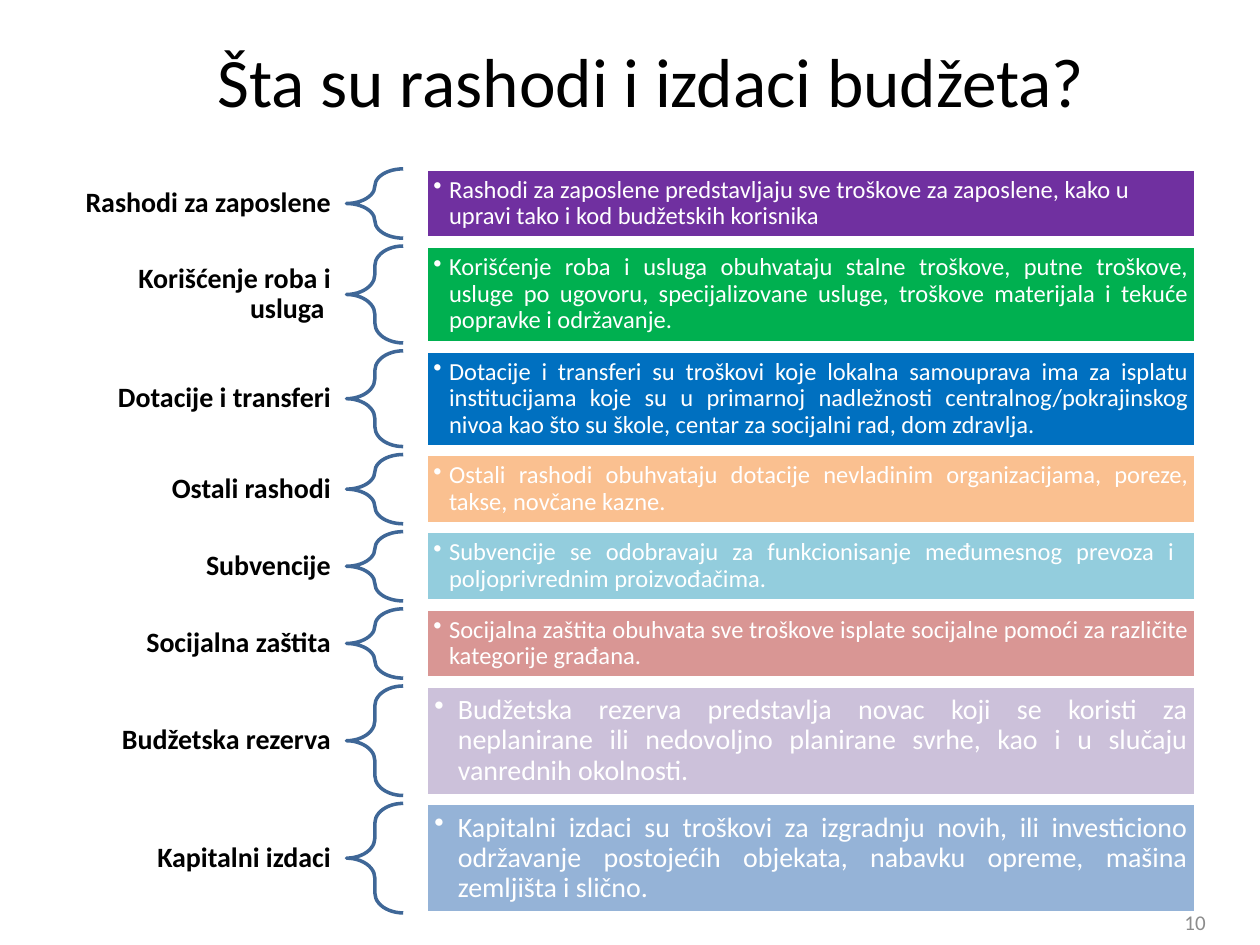
from dataclasses import dataclass

from lxml import etree
from pptx import Presentation
from pptx.dml.color import RGBColor
from pptx.enum.shapes import MSO_SHAPE
from pptx.enum.text import MSO_ANCHOR, PP_ALIGN
from pptx.oxml.ns import qn
from pptx.util import Pt

LEFT, CENTER, RIGHT, JUSTIFY = PP_ALIGN.LEFT, PP_ALIGN.CENTER, PP_ALIGN.RIGHT, PP_ALIGN.JUSTIFY
MIDDLE = MSO_ANCHOR.MIDDLE
BRACE, RECTANGLE = MSO_SHAPE.LEFT_BRACE, MSO_SHAPE.RECTANGLE


@dataclass(frozen=True)
class Theme:
    font: str = "Calibri"
    ink: str = "000000"
    paper: str = "FFFFFF"
    muted: str = "8C8C8C"
    brace: str = "3F6797"
    title_size: float = 39.6
    label_size: float = 16
    number_size: float = 12
    line_width: float = 2


@dataclass(frozen=True)
class Expense:
    label: str
    detail: str
    fill: str
    height: float
    size: float = 14
    align: PP_ALIGN = JUSTIFY
    label_lines: int = 1


THEME = Theme()
ROW_GAP = 4.5
EXPENSES = [
    Expense("Rashodi za zaposlene",
            "Rashodi za zaposlene predstavljaju sve troškove za zaposlene, kako u upravi "
            "tako i kod budžetskih korisnika", "7030A0", 39.6, align=LEFT),
    Expense("Korišćenje roba i usluga ",
            "Korišćenje roba i usluga obuhvataju stalne troškove, putne troškove, usluge po "
            "ugovoru, specijalizovane usluge, troškove materijala i tekuće popravke i održavanje.",
            "00B050", 55.4, label_lines=2),
    Expense("Dotacije i transferi",
            "Dotacije i transferi su troškovi koje lokalna samouprava ima za isplatu "
            "institucijama koje su u primarnoj nadležnosti centralnog/pokrajinskog nivoa "
            "kao što su škole, centar za socijalni rad, dom zdravlja. ", "0070C0", 54.7),
    Expense("Ostali rashodi",
            "Ostali rashodi obuhvataju dotacije nevladinim organizacijama, poreze, takse, "
            "novčane kazne.", "FAC090", 39.6),
    Expense("Subvencije",
            "Subvencije se odobravaju za funkcionisanje međumesnog prevoza i  "
            "poljoprivrednim proizvođačima. ", "93CDDD", 39.6),
    Expense("Socijalna zaštita",
            "Socijalna zaštita obuhvata sve troškove isplate socijalne pomoći za različite "
            "kategorije građana.", "D99694", 39.6),
    Expense("Budžetska rezerva",
            "Budžetska rezerva predstavlja novac koji se koristi za neplanirane ili nedovoljno "
            "planirane svrhe, kao i u slučaju vanrednih okolnosti.", "CCC1DA", 62.6, size=16),
    Expense("Kapitalni izdaci",
            "Kapitalni izdaci su troškovi za izgradnju novih, ili investiciono održavanje "
            "postojećih objekata, nabavku opreme, mašina zemljišta i slično.",
            "95B3D7", 62.6, size=16),
]


def apply_format(target, values):
    for name, value in values.items():
        setattr(target, name, value)


def write_text(shape, text, size, color, align, bold=False, inset=(7.2, 3.6), spacing=1.0):
    frame = shape.text_frame
    across, down = map(Pt, inset)
    apply_format(frame, {"word_wrap": True, "vertical_anchor": MIDDLE,
                         "margin_left": across, "margin_right": across,
                         "margin_top": down, "margin_bottom": down})
    para = frame.paragraphs[0]
    apply_format(para, {"alignment": align, "line_spacing": spacing})
    span = para.add_run()
    span.text = text
    apply_format(span.font, {"name": THEME.font, "size": Pt(size), "bold": bold})
    span.font.color.rgb = RGBColor.from_string(color)
    return para


def add_text(page, box, text, size, color, align, **options):
    shape = page.shapes.add_textbox(*map(Pt, box))
    write_text(shape, text, size, color, align, **options)


def add_outlined(page, kind, box, line_color):
    shape = page.shapes.add_shape(kind, *map(Pt, box))
    shape.shadow.inherit = False
    shape.line.color.rgb = RGBColor.from_string(line_color)
    shape.line.width = Pt(THEME.line_width)
    return shape


def add_bullet(para, indent):
    properties = para._p.get_or_add_pPr()
    properties.set("marL", str(Pt(indent)))
    properties.set("indent", str(-Pt(indent)))
    etree.SubElement(properties, qn("a:buChar")).set("char", "•")


def add_expense(page, box, expense):
    left, top, width, height = box
    label_height = 8.4 + 16.8 * expense.label_lines
    label_top = top + (height - label_height) / 2
    add_text(page, (left, label_top, 162, label_height), expense.label, THEME.label_size,
             THEME.ink, RIGHT, bold=True, inset=(8.96, 3), spacing=0.9)

    brace = add_outlined(page, BRACE, (left + 162, top, 32.4, height), THEME.brace)
    brace.fill.background()
    brace.adjustments[0] = 0.35
    brace.adjustments[1] = 0.5

    detail_left = 207.4
    panel = add_outlined(page, RECTANGLE,
                         (left + detail_left, top, width - detail_left, height), THEME.paper)
    panel.fill.solid()
    panel.fill.fore_color.rgb = RGBColor.from_string(expense.fill)
    inset, indent = (4.2, 9) if expense.size == 14 else (4.8, 13.5)
    para = write_text(panel, expense.detail, expense.size, THEME.paper, expense.align,
                      inset=(inset, inset), spacing=0.9)
    add_bullet(para, indent)


def add_expenses(page, box):
    left, top, width = box
    for expense in EXPENSES:
        add_expense(page, (left, top, width, expense.height), expense)
        top += expense.height + ROW_GAP


def main():
    deck = Presentation()
    apply_format(deck, {"slide_width": Pt(720), "slide_height": Pt(540)})
    page = deck.slides.add_slide(deck.slide_layouts[6])
    add_text(page, (48, 21, 648, 49), "Šta su rashodi i izdaci budžeta?",
             THEME.title_size, THEME.ink, CENTER)
    add_expenses(page, (36, 96.5, 647.5))
    add_text(page, (528, 512.75, 168, 28.75), "10", THEME.number_size, THEME.muted, RIGHT)
    deck.save("out.pptx")


if __name__ == "__main__":
    main()
